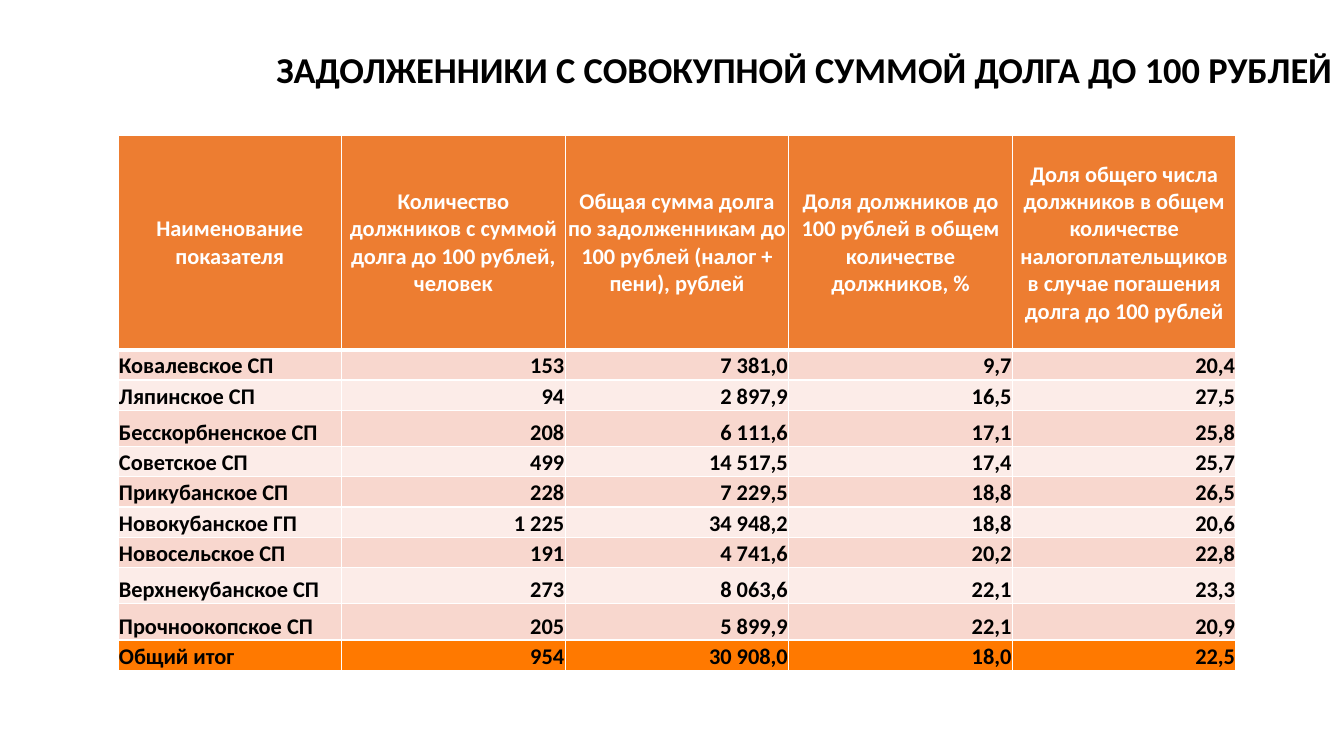
from lxml.etree import SubElement as Sub
from pptx import Presentation
from pptx.dml.color import RGBColor
from pptx.enum.text import MSO_ANCHOR as Anchor, PP_ALIGN as Align
from pptx.oxml.ns import qn
from pptx.util import Inches, Pt

HEADS = [
    "Наименование показателя",
    "Количество должников с суммой долга до 100 рублей, человек",
    "Общая сумма долга по задолженникам до 100 рублей (налог + пени), рублей",
    "Доля должников до 100 рублей в общем количестве должников, %",
    "Доля общего числа должников в общем количестве налогоплательщиков "
    "в случае погашения долга до 100 рублей",
]
DEBTS = [
    ["Ковалевское СП", "153", "7 381,0", "9,7", "20,4"],
    ["Ляпинское СП", "94", "2 897,9", "16,5", "27,5"],
    ["Бесскорбненское СП", "208", "6 111,6", "17,1", "25,8"],
    ["Советское СП", "499", "14 517,5", "17,4", "25,7"],
    ["Прикубанское СП", "228", "7 229,5", "18,8", "26,5"],
    ["Новокубанское ГП", "1 225", "34 948,2", "18,8", "20,6"],
    ["Новосельское СП", "191", "4 741,6", "20,2", "22,8"],
    ["Верхнекубанское СП", "273", "8 063,6", "22,1", "23,3"],
    ["Прочноокопское СП", "205", "5 899,9", "22,1", "20,9"],
]
TOTAL = ["Общий итог", "954", "30 908,0", "18,0", "22,5"]
TALL = ("Бесскорбненское СП", "Верхнекубанское СП", "Прочноокопское СП")


def tint(code):
    return RGBColor.from_string(code)


def write(frame, text, size=16, color="000000", align=Align.LEFT, space=1.0):
    frame.word_wrap = True
    line = frame.paragraphs[0]
    line.alignment = align
    line.line_spacing = space
    run = line.add_run()
    run.text = text
    font = run.font
    font.name, font.size, font.bold = "Calibri", Pt(size), True
    font.color.rgb = tint(color)


class Deck:
    white = "FFFFFF"
    head = "ED7D31"
    bands = ("F8D7CE", "FCECE8")
    total = "FF7900"

    def __init__(self):
        self.show = Presentation()
        self.show.slide_width = Inches(13.33)
        self.show.slide_height = Inches(7.5)
        self.slide = self.show.slides.add_slide(self.show.slide_layouts[5])

    def title(self, text, left, top, width, height):
        box = self.slide.shapes.title
        box.left, box.top = Inches(left), Inches(top)
        box.width, box.height = Inches(width), Inches(height)
        box.text_frame.vertical_anchor = Anchor.MIDDLE
        write(box.text_frame, text, size=26, align=Align.RIGHT, space=0.9)

    def border(self, cell, widths):
        props = cell._tc.get_or_add_tcPr()
        for side, width in zip("LRTB", widths):
            edge = Sub(props, qn("a:ln" + side), w=str(Pt(width)))
            fill = Sub(edge, qn("a:solidFill"))
            Sub(fill, qn("a:srgbClr"), val=self.white)

    def cell(self, cell, text, fill, widths, anchor, **style):
        cell.margin_left = cell.margin_right = cell.margin_top = Inches(0.01)
        cell.margin_bottom = 0
        cell.vertical_anchor = anchor
        self.border(cell, widths)
        cell.fill.solid()
        cell.fill.fore_color.rgb = tint(fill)
        write(cell.text_frame, text, **style)

    def table(self, left, top, width, heights):
        rows = [HEADS, *DEBTS, TOTAL]
        grid = self.slide.shapes.add_table(
            len(rows), len(HEADS), Inches(left), Inches(top),
            Inches(width), Inches(sum(heights))).table
        for row, height in zip(grid.rows, heights):
            row.height = Inches(height)
        for r, row in enumerate(rows):
            fill = self.total if row is TOTAL else self.bands[(r - 1) % 2]
            for c, text in enumerate(row):
                if r == 0:
                    self.cell(grid.cell(r, c), text, self.head, (1, 1, 1, 3),
                              Anchor.MIDDLE, color=self.white,
                              align=Align.CENTER)
                else:
                    self.cell(grid.cell(r, c), text, fill,
                              (1, 1, 3 if r == 1 else 1, 1), Anchor.BOTTOM,
                              align=Align.RIGHT if c else Align.LEFT)


def main():
    deck = Deck()
    deck.title("ЗАДОЛЖЕННИКИ С СОВОКУПНОЙ СУММОЙ ДОЛГА ДО 100 РУБЛЕЙ",
               1.66, 0.29, 11.67, 0.85)
    sizes = [0.36 if row[0] in TALL else 0.3 for row in [*DEBTS, TOTAL]]
    deck.table(1.17, 1.34, 11.09, [2.13, *sizes])
    deck.show.save("out.pptx")


if __name__ == "__main__":
    main()
